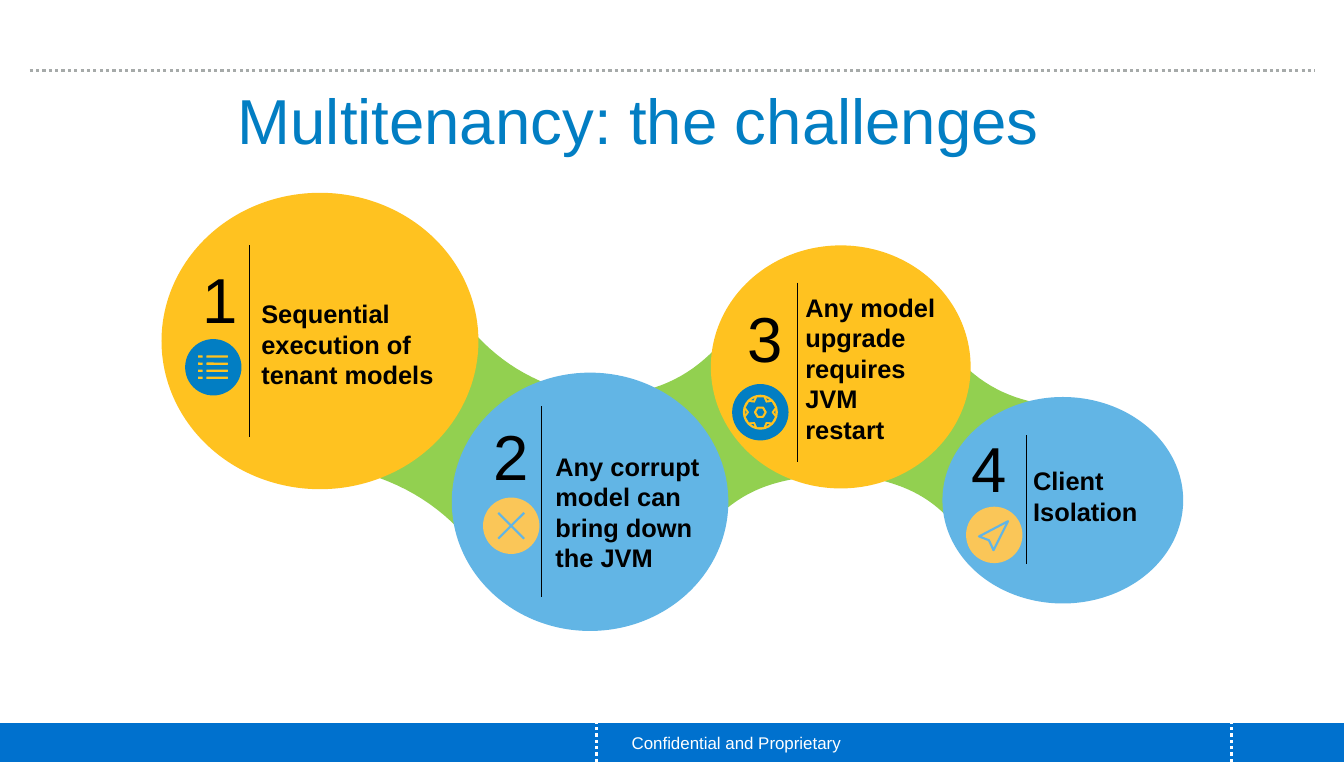
from math import cos, radians, sin

from pptx import Presentation
from pptx.dml.color import RGBColor
from pptx.enum.dml import MSO_LINE
from pptx.enum.shapes import MSO_CONNECTOR as CONN, MSO_SHAPE as SHAPE
from pptx.enum.text import MSO_ANCHOR as ANCHOR, PP_ALIGN as ALIGN
from pptx.oxml.ns import qn
from pptx.util import Inches, Pt

WHITE = RGBColor(0xFF, 0xFF, 0xFF)
BLACK = RGBColor(0x00, 0x00, 0x00)
GRAY = RGBColor(0xA6, 0xAA, 0xA9)
BAR_BLUE = RGBColor(0x00, 0x71, 0xCE)
DEEP_BLUE = RGBColor(0x02, 0x7E, 0xC3)
SKY = RGBColor(0x62, 0xB5, 0xE5)
YELLOW = RGBColor(0xFF, 0xC2, 0x20)
AMBER = RGBColor(0xFA, 0xC6, 0x58)
GREEN = RGBColor(0x92, 0xD0, 0x50)

W, H = 17.64, 10
BAR_TOP = 9.49
ICON_R = 0.37

BRIDGES = [
    [(12.86, 7.33), (12.3, 6.46), (11.89, 6.34), (11, 6.19),
     (12.22, 4.2), (12.66, 5.01), (13.25, 5.31), (14.08, 5.34)],
    [(10.93, 6.23), (9.85, 6.29), (9.53, 6.59), (8.93, 7.32),
     (7.76, 5.19), (8.72, 5.22), (9.29, 4.83), (9.76, 4.1)],
    [(5.7, 3.68), (6.46, 4.85), (7, 5.05), (8.19, 5.34),
     (6.59, 7.73), (6, 6.65), (5.21, 6.21), (4.1, 6.07)],
]
CIRCLES = [
    ((9.33, 3.22, 3.41, 3.19), YELLOW),
    ((2.12, 2.53, 4.16, 3.89), YELLOW),
    ((5.93, 4.89, 3.63, 3.39), SKY),
    ((12.37, 5.21, 3.16, 2.71), SKY),
]
CHALLENGES = [
    ("Sequential execution of tenant models", (3.43, 3.91, 2.65, 1.21),
     (2.61, 3.36, 1.17, 1.11), (3.27, 3.22, 5.73)),
    ("Any corrupt model can bring down the JVM", (7.29, 5.91, 2.3, 1.62),
     (6.43, 5.42, 1.06, 1.11), (7.11, 5.33, 7.84)),
    ("Any model upgrade requires JVM restart", (10.57, 4.02, 1.81, 1.62),
     (9.76, 3.87, 0.94, 1.11), (10.46, 3.71, 6.06)),
    ("Client Isolation", (13.56, 6.1, 1.83, 0.81),
     (12.7, 5.58, 0.98, 1.11), (13.47, 5.71, 7.4)),
]


def bezier(a, b, c, d, steps=24):
    for i in range(steps + 1):
        t = i / steps
        u = 1 - t
        yield tuple(u**3 * p + 3 * u * u * t * q + 3 * u * t * t * r + t**3 * v
                    for p, q, r, v in zip(a, b, c, d))


def polar(cx, cy, radius, angle):
    return cx + radius * cos(radians(angle)), cy + radius * sin(radians(angle))


class Deck:
    font = "Arial"

    def __init__(self):
        self.prs = Presentation()
        self.prs.slide_width, self.prs.slide_height = Inches(W), Inches(H)
        self.s = self.prs.slides.add_slide(self.prs.slide_layouts[5])

    def paint(self, sp, fill, line=None, width=0.5):
        sp.shadow.inherit = False
        if fill is None:
            sp.fill.background()
        else:
            sp.fill.solid()
            sp.fill.fore_color.rgb = fill
        if line is None:
            sp.line.fill.background()
        else:
            sp.line.color.rgb = line
            sp.line.width = Pt(width)

    def shape(self, kind, box, fill, **line):
        sp = self.s.shapes.add_shape(kind, *map(Inches, box))
        self.paint(sp, fill, **line)

    def disc(self, cx, cy, radius, fill):
        self.shape(SHAPE.OVAL, (cx - radius, cy - radius, 2 * radius, 2 * radius), fill)

    def polygon(self, points, fill, **line):
        first, *rest = [(Inches(x), Inches(y)) for x, y in points]
        builder = self.s.shapes.build_freeform(*first)
        builder.add_line_segments(rest, close=True)
        self.paint(builder.convert_to_shape(), fill, **line)

    def line(self, x1, y1, x2, y2, color, width, dash=None):
        ln = self.s.shapes.add_connector(CONN.STRAIGHT, *map(Inches, (x1, y1, x2, y2)))
        ln.line.color.rgb = color
        ln.line.width = Pt(width)
        if dash:
            ln.line.dash_style = dash
        props = ln._element.spPr
        props.append(props.makeelement(qn("a:effectLst"), {}))

    def set_text(self, sp, text, size, color, anchor=ANCHOR.MIDDLE, inset=0, bold=False, **para):
        tf = sp.text_frame
        margins = {f"margin_{side}": Inches(inset) for side in ("left", "top", "right", "bottom")}
        for name, value in {"word_wrap": True, "vertical_anchor": anchor, **margins}.items():
            setattr(tf, name, value)
        p = tf.paragraphs[0]
        for name, value in {"alignment": ALIGN.LEFT, **para}.items():
            setattr(p, name, value)
        r = p.add_run()
        r.text = text
        for name, value in {"name": self.font, "size": Pt(size), "bold": bold}.items():
            setattr(r.font, name, value)
        r.font.color.rgb = color

    def text(self, box, text, size, color, **style):
        sp = self.s.shapes.add_textbox(*map(Inches, box))
        self.set_text(sp, text, size, color, **style)

    def title(self, box, text, size, color):
        sp = self.s.shapes.title
        for name, value in zip(("left", "top", "width", "height"), box):
            setattr(sp, name, Inches(value))
        self.set_text(sp, text, size, color, anchor=ANCHOR.TOP, line_spacing=0.9)

    def list_icon(self, cx, cy):
        self.disc(cx, cy, ICON_R, DEEP_BLUE)
        for row in range(4):
            y = cy - 0.155 + row * 0.093
            for x, width in ((-0.2, 0.06), (-0.09, 0.28)):
                self.shape(SHAPE.ROUNDED_RECTANGLE, (cx + x, y, width, 0.03), YELLOW)

    def cross_icon(self, cx, cy):
        self.disc(cx, cy, ICON_R, AMBER)
        for slope in (1, -1):
            self.line(cx - 0.17, cy - 0.17 * slope, cx + 0.17, cy + 0.17 * slope, SKY, 2)

    def gear_icon(self, cx, cy):
        self.disc(cx, cy, ICON_R, DEEP_BLUE)
        self.disc(cx, cy, 0.23, YELLOW)
        turns = range(0, 360, 60)
        self.polygon([polar(cx, cy, radius, turn + step) for turn in turns
                      for radius, step in ((0.145, 0), (0.2, 18), (0.2, 42))], DEEP_BLUE)
        for turn in turns:
            self.polygon([polar(cx, cy, radius, turn + step)
                          for radius, step in ((0.18, 0), (0.2, 7), (0.2, -7))], DEEP_BLUE)
        self.polygon([polar(cx, cy, 0.07, turn) for turn in turns], None, line=YELLOW, width=2)

    def plane_icon(self, cx, cy):
        self.disc(cx, cy, ICON_R, AMBER)
        outline = ((0.18, -0.18), (-0.01, 0.2), (-0.07, 0.07), (-0.2, 0.02))
        self.polygon([(cx + x, cy + y) for x, y in outline], None, line=SKY, width=2)


def main():
    d = Deck()
    d.shape(SHAPE.RECTANGLE, (0, BAR_TOP, W, H - BAR_TOP), BAR_BLUE)
    d.text((8.25, 9.54, 6.88, 0.42), "Confidential and Proprietary", 16, WHITE, inset=0.04)
    for x in (16.16, 7.83):
        d.line(x, H, x, BAR_TOP, WHITE, 3, MSO_LINE.ROUND_DOT)
    d.line(0.39, 0.93, 17.25, 0.93, GRAY, 3, MSO_LINE.ROUND_DOT)
    d.title((3.12, 1.18, 11.73, 1.94), "Multitenancy: the challenges", 60, DEEP_BLUE)

    for points in BRIDGES:
        d.polygon([*bezier(*points[:4]), *bezier(*points[4:])], GREEN)
    for box, color in CIRCLES:
        d.shape(SHAPE.OVAL, box, color)
    for number, (label, label_box, number_box, (x, top, bottom)) in enumerate(CHALLENGES, 1):
        d.text(label_box, label, 24, BLACK, bold=True, space_after=Pt(7.9))
        d.text(number_box, str(number), 60, BLACK, inset=0.05)
        d.line(x, top, x, bottom, BLACK, 0.5)

    d.list_icon(2.8, 4.82)
    d.cross_icon(6.71, 6.9)
    d.gear_icon(9.98, 5.41)
    d.plane_icon(13.05, 7.02)
    d.prs.save("out.pptx")


if __name__ == "__main__":
    main()
